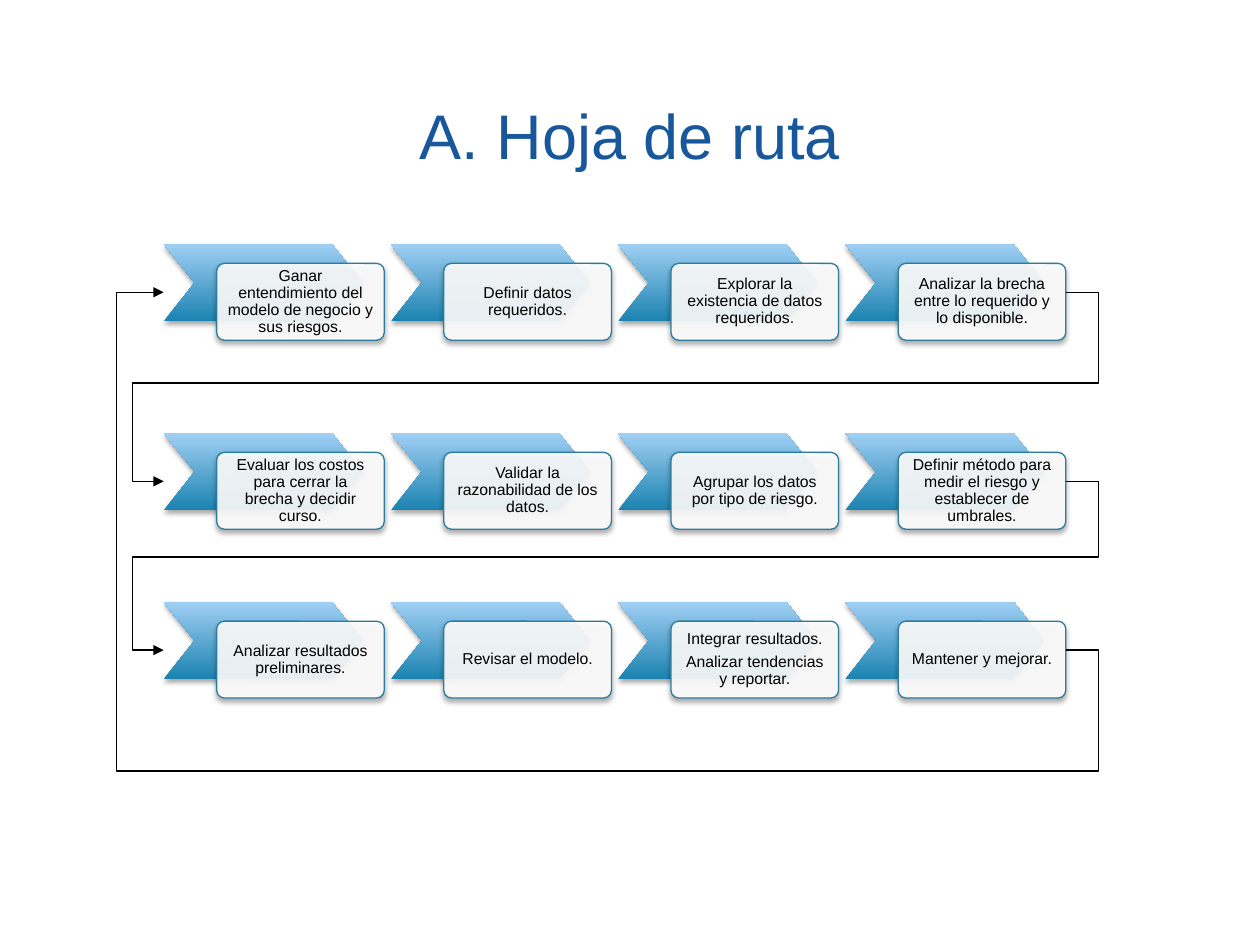
from dataclasses import dataclass

from lxml import etree
from pptx import Presentation
from pptx import util as u
from pptx.dml.color import RGBColor
from pptx.enum import shapes, text
from pptx.oxml import ns

COLORS = {
    "title": "18579B",
    "chevron_dark": "1B83B0",
    "chevron_light": "A0CFF4",
    "card": "FFFFFF",
    "card_edge": "2C7C9F",
    "ink": "000000",
}
FONT = "Arial"
FIRST_LEFT, STEP_PITCH = 1.3, 1.803
CHEVRON_SIZE = (1.58, 0.61)
CARD_SIZE = (1.33, 0.61)
CARD_OFFSET = (0.42, 0.15)
LINK_START, LINK_END, LINK_DROP = 8.46, 1.3, 0.38
RIGHT_LANE = 8.72


@dataclass(frozen=True)
class Stage:
    top: float
    steps: tuple[str, ...]


@dataclass(frozen=True)
class Link:
    source: Stage
    target: Stage
    lane_y: float
    left_lane: float


STAGES = (
    Stage(1.94, (
        "Ganar entendimiento del modelo de negocio y sus riesgos.",
        "Definir datos requeridos.",
        "Explorar la existencia de datos requeridos.",
        "Analizar la brecha entre lo requerido y lo disponible.",
    )),
    Stage(3.44, (
        "Evaluar los costos para cerrar la brecha y decidir curso.",
        "Validar la razonabilidad de los datos.",
        "Agrupar los datos por tipo de riesgo.",
        "Definir método para medir el riesgo y establecer de umbrales.",
    )),
    Stage(4.78, (
        "Analizar resultados preliminares.",
        "Revisar el modelo.",
        "Integrar resultados.\nAnalizar tendencias y reportar.",
        "Mantener y mejorar.",
    )),
)
LINKS = (
    Link(STAGES[0], STAGES[1], 3.04, 1.05),
    Link(STAGES[1], STAGES[2], 4.42, 1.05),
    Link(STAGES[2], STAGES[0], 6.12, 0.93),
)


def rgb(name: str) -> RGBColor:
    return RGBColor.from_string(COLORS[name])


def add_child(parent, tag: str, **attributes):
    return etree.SubElement(parent, ns.qn(tag), **attributes)


def write(shape, words: str, *, size: float, color: str, inset: float,
          line_spacing: float = 1.0, space_after: float = 0) -> None:
    frame = shape.text_frame
    frame.word_wrap = True
    frame.vertical_anchor = text.MSO_ANCHOR.MIDDLE
    frame.margin_left = frame.margin_right = u.Inches(inset)
    frame.margin_top = frame.margin_bottom = u.Inches(inset)
    frame.text = words
    for paragraph in frame.paragraphs:
        paragraph.alignment = text.PP_ALIGN.CENTER
        paragraph.line_spacing = line_spacing
        paragraph.space_after = u.Pt(space_after)
        font = paragraph.runs[0].font
        font.name, font.size = FONT, u.Pt(size)
        font.color.rgb = rgb(color)


def add_soft_shape(parent, preset, left: float, top: float,
                   size: tuple[float, float], adjustment: float):
    shape = parent.shapes.add_shape(
        preset, u.Inches(left), u.Inches(top), *map(u.Inches, size))
    shape.adjustments[0] = adjustment
    shape.shadow.inherit = False
    effects = shape.element.spPr.find(ns.qn("a:effectLst"))
    shadow = add_child(effects, "a:outerShdw", blurRad=str(u.Pt(3.1)),
                       dist=str(u.Pt(1.8)), dir="5400000", rotWithShape="0")
    tint = add_child(shadow, "a:srgbClr", val=COLORS["ink"])
    add_child(tint, "a:alpha", val="35000")
    return shape


def add_step(group, left: float, top: float, words: str) -> None:
    chevron = add_soft_shape(group, shapes.MSO_SHAPE.CHEVRON,
                             left, top, CHEVRON_SIZE, 0.4)
    chevron.fill.gradient()
    chevron.fill.gradient_angle = 90
    for stop, position, name in zip(chevron.fill.gradient_stops, (0, 1),
                                    ("chevron_dark", "chevron_light")):
        stop.position = position
        stop.color.rgb = rgb(name)
    chevron.line.fill.background()

    card = add_soft_shape(group, shapes.MSO_SHAPE.ROUNDED_RECTANGLE,
                          left + CARD_OFFSET[0], top + CARD_OFFSET[1],
                          CARD_SIZE, 0.1)
    card.fill.solid()
    card.fill.fore_color.rgb = rgb("card")
    card_color = card.element.spPr.find(
        f"{ns.qn('a:solidFill')}/{ns.qn('a:srgbClr')}")
    add_child(card_color, "a:alpha", val="90000")
    card.line.color.rgb = rgb("card_edge")
    card.line.width = u.Pt(0.75)
    write(card, words, size=9, color="ink", inset=0.07,
          line_spacing=0.9, space_after=3)


def add_link(slide, link: Link) -> None:
    start_y = link.source.top + LINK_DROP
    end_y = link.target.top + LINK_DROP
    connector = slide.shapes.add_connector(
        shapes.MSO_CONNECTOR.ELBOW, u.Inches(LINK_START), u.Inches(start_y),
        u.Inches(LINK_END), u.Inches(end_y))
    connector.line.color.rgb = rgb("ink")
    connector.line.width = u.Pt(0.75)
    properties = connector.element.spPr
    add_child(properties.find(ns.qn("a:ln")), "a:tailEnd", type="triangle")
    add_child(properties, "a:effectLst")

    geometry = properties.find(ns.qn("a:prstGeom"))
    geometry.set("prst", "bentConnector5")
    guides = geometry.find(ns.qn("a:avLst"))
    if guides is None:
        guides = add_child(geometry, "a:avLst")
    span = LINK_END - LINK_START
    bends = ((RIGHT_LANE - LINK_START) / span,
             (link.lane_y - start_y) / (end_y - start_y),
             (link.left_lane - LINK_START) / span)
    for number, bend in enumerate(bends, start=1):
        add_child(guides, "a:gd", name=f"adj{number}",
                  fmla=f"val {round(bend * 100000)}")


def main() -> None:
    deck = Presentation()
    deck.slide_width, deck.slide_height = u.Inches(10), u.Inches(7.5)
    slide = deck.slides.add_slide(deck.slide_layouts[6])

    title = slide.shapes.add_textbox(
        u.Inches(0.75), u.Inches(0.67), u.Inches(8.5), u.Inches(0.8))
    write(title, "A. Hoja de ruta", size=36, color="title", inset=0.05)

    for stage in STAGES:
        group = slide.shapes.add_group_shape()
        for column, words in enumerate(stage.steps):
            add_step(group, FIRST_LEFT + column * STEP_PITCH, stage.top, words)
    for link in LINKS:
        add_link(slide, link)

    deck.save("out.pptx")


if __name__ == "__main__":
    main()
